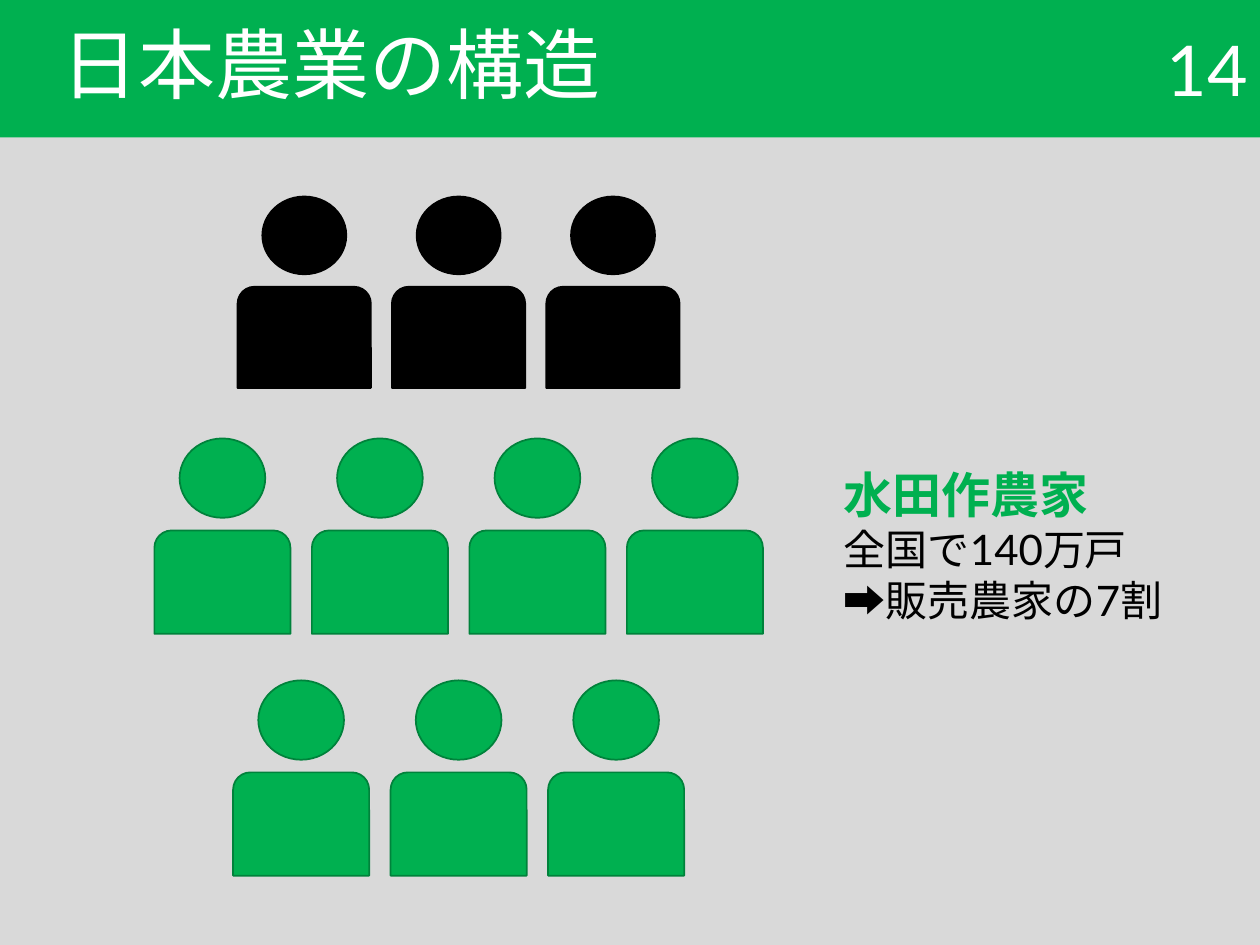
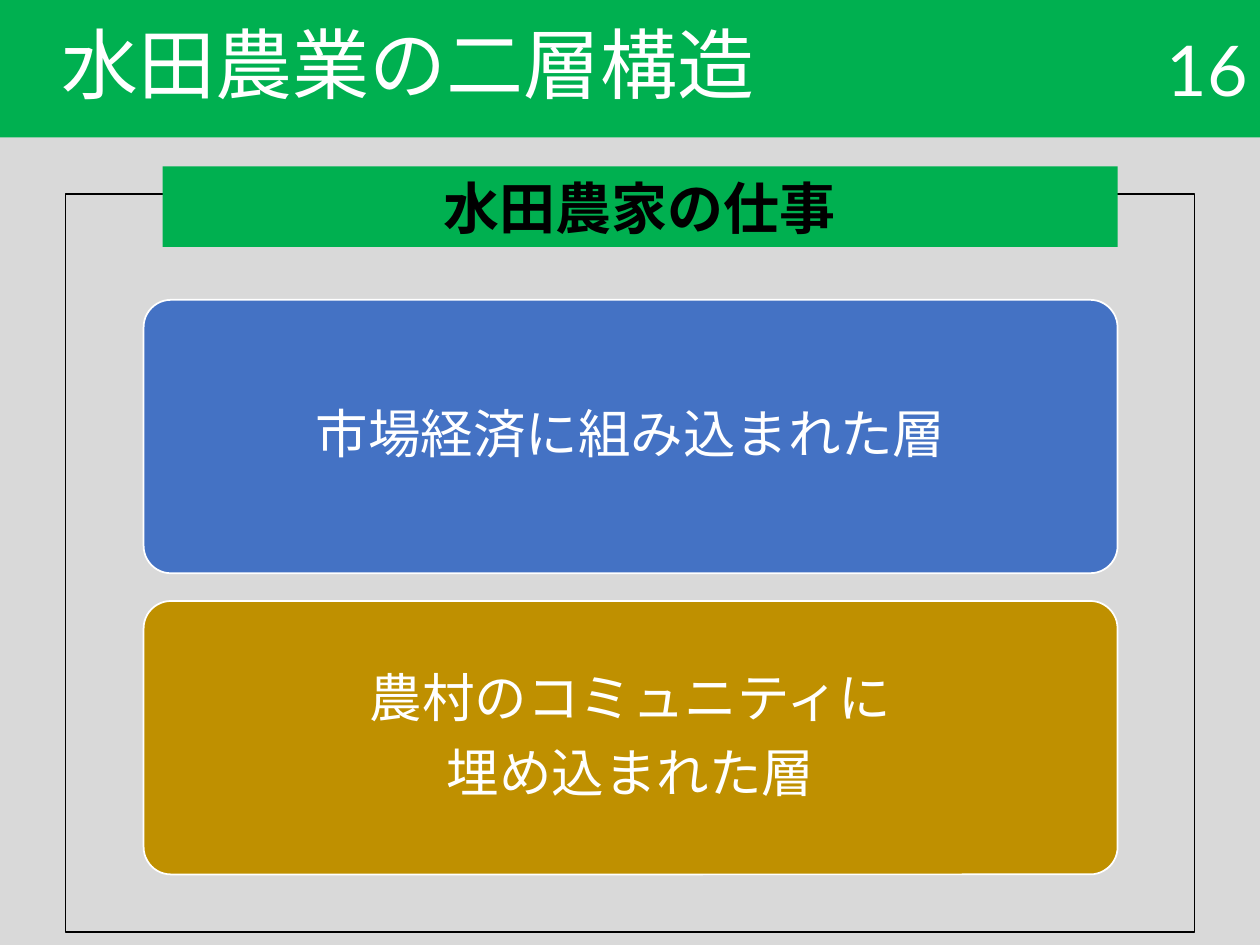
from dataclasses import dataclass

from lxml.etree import SubElement
from pptx import Presentation
from pptx.dml.color import RGBColor as RGB
from pptx.enum.lang import MSO_LANGUAGE_ID as LANG
from pptx.enum.shapes import MSO_SHAPE as SHAPE
from pptx.enum.text import MSO_ANCHOR as ANCHOR, PP_ALIGN as ALIGN
from pptx.oxml.ns import qn
from pptx.util import Inches, Pt


@dataclass(frozen=True)
class Theme:
    font: str = "Lato"
    paper: str = "D9D9D9"
    green: str = "00B050"
    dark_green: str = "00823B"
    blue: str = "4472C4"
    gold: str = "BF9000"
    black: str = "000000"
    white: str = "FFFFFF"
    title: int = 44
    number: int = 40
    label: int = 32
    layer: int = 30
    heading: int = 28
    body: int = 24


T = Theme()
WIDTH, HEIGHT, BAND = 10, 7.5, 1.09


def add_box(shapes, kind, box, fill=None, line=None):
    sp = shapes.add_shape(kind, *map(Inches, box))
    sp.shadow.inherit = False
    if fill:
        sp.fill.solid()
        sp.fill.fore_color.rgb = RGB.from_string(fill)
    else:
        sp.fill.background()
    if line:
        sp.line.color.rgb = RGB.from_string(line)
        sp.line.width = Pt(1)
    else:
        sp.line.fill.background()
    return sp


def add_text(shapes, box):
    return shapes.add_textbox(*map(Inches, box))


def write(sp, lines, align=ALIGN.LEFT, anchor=ANCHOR.MIDDLE):
    tf = sp.text_frame
    tf.word_wrap = True
    tf.vertical_anchor = anchor
    for i, (text, size, color, bold) in enumerate(lines):
        p = tf.add_paragraph() if i else tf.paragraphs[0]
        p.alignment = align
        r = p.add_run()
        r.text = text
        r.font.size = Pt(size)
        r.font.bold = bold
        r.font.color.rgb = RGB.from_string(color)
        r.font.name = T.font
        r.font.language_id = LANG.JAPANESE
        SubElement(r.font._element, qn("a:ea"), typeface=T.font)
    return tf


def start_slide(prs, title, number):
    s = prs.slides.add_slide(prs.slide_layouts[6])
    s.background.fill.solid()
    s.background.fill.fore_color.rgb = RGB.from_string(T.paper)
    band = add_box(s.shapes, SHAPE.RECTANGLE, (0, 0, WIDTH, BAND), T.green)
    p = write(band, [(title, T.title, T.white, False)]).paragraphs[0]
    p.line_spacing = 0.9
    p._p.get_or_add_pPr().set("marL", str(Inches(0.39)))
    page = add_text(s.shapes, (8.06, 0, 1.94, BAND))
    write(page, [(number, T.number, T.white, False)], ALIGN.RIGHT)
    return s


def add_people(s, center, top, count, fill, line, scale=1):
    body_w, body_h, head_w, head_h, neck, pitch = (
        scale * size for size in (1.08, 0.82, 0.68, 0.63, 0.1, 1.25))
    left = center - ((count - 1) * pitch + body_w) / 2
    row = s.shapes.add_group_shape()
    for i in range(count):
        x = left + i * pitch
        head = (x + (body_w - head_w) / 2, top, head_w, head_h)
        body = (x, top + head_h + neck, body_w, body_h)
        add_box(row.shapes, SHAPE.OVAL, head, fill, line)
        add_box(row.shapes, SHAPE.ROUND_2_SAME_RECTANGLE, body, fill, line)


def add_crowd(s, center, top):
    others = (T.black, T.black, 0.98)
    paddy = (T.green, T.dark_green)
    for i, (count, style) in enumerate([(3, others), (4, paddy), (3, paddy)]):
        add_people(s, center, top + i * 1.92, count, *style)


def add_paddy_note(s, box):
    write(add_text(s.shapes, box), [
        ("水田作農家", T.heading, T.green, True),
        ("全国で140万戸", T.body, T.black, False),
        ("➡販売農家の7割", T.body, T.black, False),
    ], anchor=ANCHOR.TOP)


def add_layer(s, box, lines, fill):
    x, y, w, h = box
    inset = 0.06
    group = s.shapes.add_group_shape()
    card = add_box(group.shapes, SHAPE.ROUNDED_RECTANGLE, box, fill, T.white)
    card.adjustments[0] = 0.1
    text = add_text(group.shapes,
                    (x + inset, y + inset, w - 2 * inset, h - 2 * inset))
    tf = write(text, [(line, T.layer, T.white, False) for line in lines],
               ALIGN.CENTER)
    tf.margin_left = tf.margin_right = Inches(0.12)
    tf.margin_top = tf.margin_bottom = Inches(0.12)
    for p in tf.paragraphs:
        p.line_spacing = 0.9
        p.space_after = Pt(0.35 * T.layer)


def add_work_panel(s, box):
    x, y, w, h = box
    layers = [(["市場経済に組み込まれた層"], T.blue),
              (["農村のコミュニティに", "埋め込まれた層"], T.gold)]
    for i, (lines, fill) in enumerate(layers):
        add_layer(s, (x + 0.62, y + 0.84 + i * 2.39, 7.73, 2.17), lines, fill)
    add_box(s.shapes, SHAPE.RECTANGLE, box, line=T.black)
    label = add_box(s.shapes, SHAPE.RECTANGLE,
                    (x + 0.77, y - 0.22, 7.58, 0.64), T.green)
    write(label, [("水田農家の仕事", T.label, T.black, True)], ALIGN.CENTER)


def build_structure(prs):
    s = start_slide(prs, "日本農業の構造", "14")
    add_crowd(s, 3.64, 1.56)
    add_paddy_note(s, (6.6, 3.64, 2.74, 1.38))


def build_two_layers(prs):
    s = start_slide(prs, "水田農業の二層構造", "16")
    add_work_panel(s, (0.52, 1.54, 8.96, 5.86))


def main():
    prs = Presentation()
    prs.slide_width, prs.slide_height = Inches(WIDTH), Inches(HEIGHT)
    build_structure(prs)
    build_two_layers(prs)
    prs.save("out.pptx")


if __name__ == "__main__":
    main()
